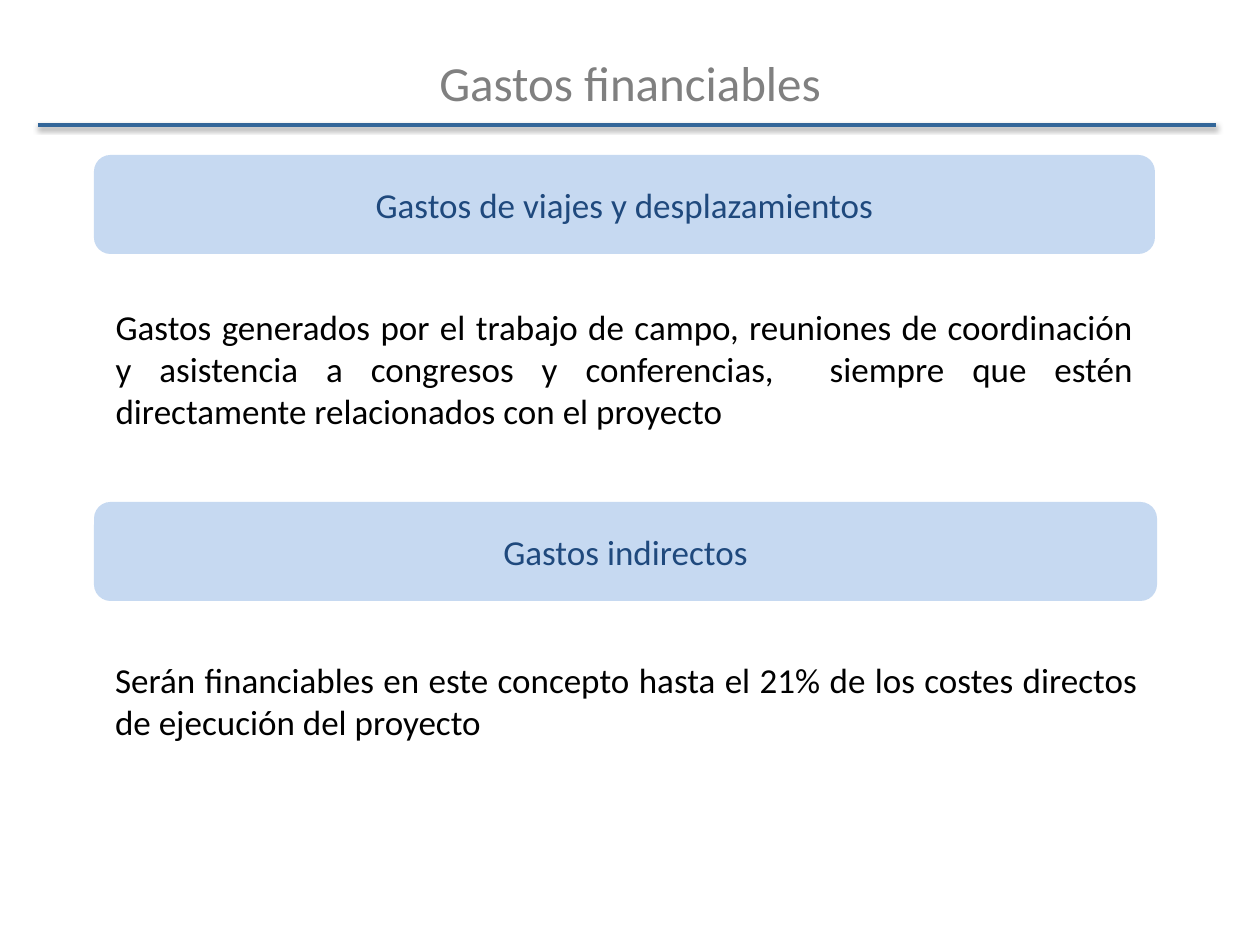
from lxml import etree
from pptx import Presentation
from pptx.dml.color import RGBColor
from pptx.enum.shapes import MSO_CONNECTOR, MSO_SHAPE
from pptx.enum.text import MSO_ANCHOR, PP_ALIGN
from pptx.oxml import parse_xml
from pptx.oxml.ns import nsdecls
from pptx.util import Emu, Pt

FONT = "Calibri"
GREY = RGBColor(0x80, 0x80, 0x80)
RULE = RGBColor(0x33, 0x66, 0x99)
PALE = RGBColor(0xC6, 0xD9, 0xF1)
NAVY = RGBColor(0x1F, 0x49, 0x7D)
WHITE = RGBColor(0xFF, 0xFF, 0xFF)
BLACK = RGBColor(0, 0, 0)

HEAD = 99  # height of a section header
GAP = 30   # space between header and text

# left, top, width, text inset, text width, text height, header, text
PARTS = [
    (94, 155, 1061, 1, 1059, 169, "Gastos de viajes y desplazamientos",
     "Gastos generados por el trabajo de campo, reuniones de coordinación "
     "y asistencia a congresos y conferencias,  siempre que estén "
     "directamente relacionados con el proyecto"),
    (94, 502, 1063, 2, 1061, 139, "Gastos indirectos",
     "Serán financiables en este concepto hasta el 21% de los costes "
     "directos de ejecución del proyecto"),
]


def px(n):
    return Emu(round(n * 914400 / 126))


def write(shape, text, size, color, align):
    frame = shape.text_frame
    frame.word_wrap = True
    frame.vertical_anchor = MSO_ANCHOR.MIDDLE
    frame.text = text
    para = frame.paragraphs[0]
    para.alignment = align
    font = para.runs[0].font
    font.name, font.size = FONT, Pt(size)
    font.color.rgb = color


def add_box(slide, box, fill, text, color, align):
    shape = slide.shapes.add_shape(MSO_SHAPE.ROUNDED_RECTANGLE, *map(px, box))
    shape.shadow.inherit = False
    shape.fill.solid()
    shape.fill.fore_color.rgb = fill
    shape.line.fill.background()
    write(shape, text, 20, color, align)


def add_title(slide, left, top, width, height):
    title = slide.shapes.title
    title.left, title.top = px(left), px(top)
    title.width, title.height = px(width), px(height)
    write(title, "Gastos financiables", 28, GREY, PP_ALIGN.CENTER)


def add_rule(slide, left, top, width):
    line = slide.shapes.add_connector(
        MSO_CONNECTOR.STRAIGHT, px(left), px(top), px(left + width), px(top))
    line.line.color.rgb = RULE
    line.line.width = Pt(2)
    # Soft shadow below the rule
    etree.strip_elements(line._element.spPr, "{*}effectLst")
    line._element.spPr.append(parse_xml(
        f'<a:effectLst {nsdecls("a")}>'
        '<a:outerShdw blurRad="40000" dist="20000" dir="5400000" '
        'rotWithShape="0"><a:srgbClr val="000000"><a:alpha val="38000"/>'
        '</a:srgbClr></a:outerShdw></a:effectLst>'))


def add_part(slide, left, top, width, inset, wide, high, head, text):
    add_box(slide, (left, top, width, HEAD), PALE, head, NAVY,
            PP_ALIGN.CENTER)
    add_box(slide, (left + inset, top + HEAD + GAP, wide, high), WHITE, text,
            BLACK, PP_ALIGN.JUSTIFY)


def main():
    deck = Presentation()
    deck.slide_width, deck.slide_height = px(1260), px(945)
    slide = deck.slides.add_slide(deck.slide_layouts[5])
    add_title(slide, 63, 38, 1134, 87)
    add_rule(slide, 38, 125, 1178)
    for part in PARTS:
        add_part(slide, *part)
    deck.save("out.pptx")


if __name__ == "__main__":
    main()
